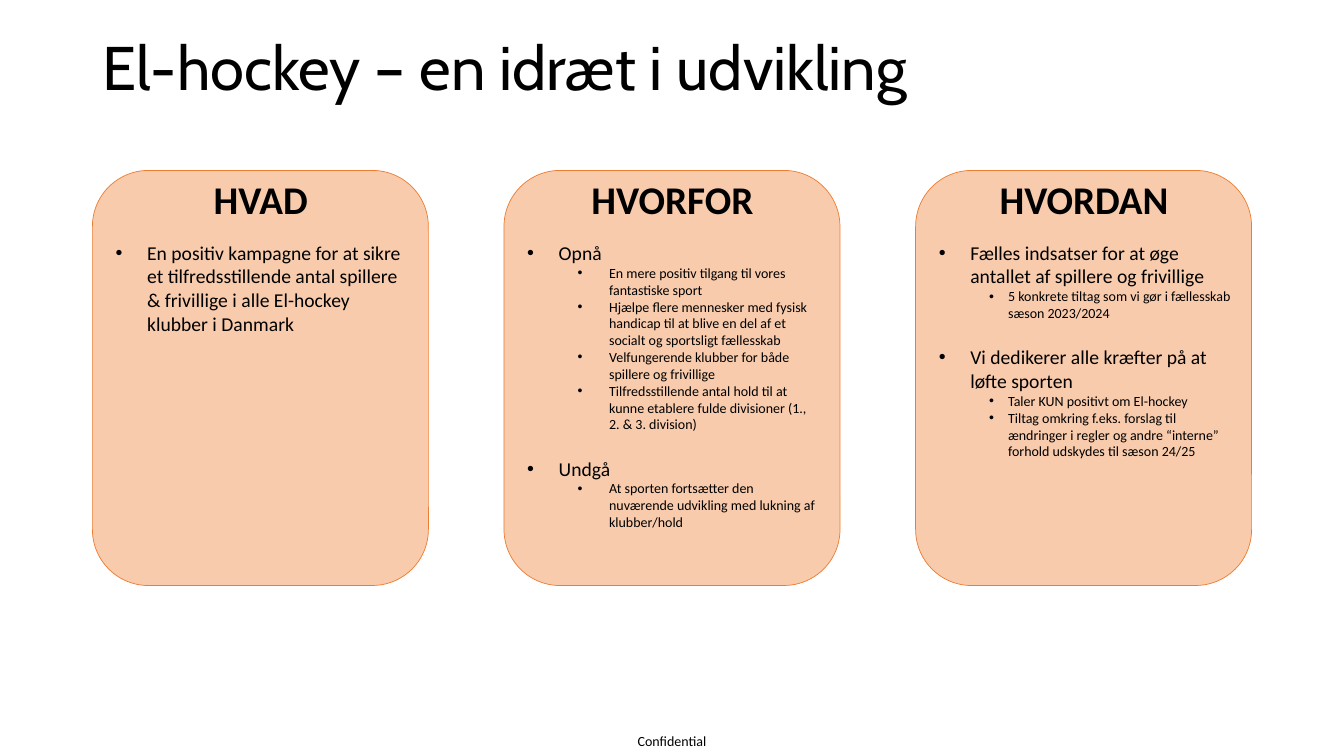
import pptx
import pptx.util
import pptx.dml.color
import pptx.enum.shapes
import pptx.enum.text
import pptx.oxml.ns
import lxml.etree

Pt = pptx.util.Pt
Align = pptx.enum.text.PP_ALIGN
Anchor = pptx.enum.text.MSO_ANCHOR
COLORS = {"text": "000000", "card": "F8CBAD", "edge": "ED7D31"}


def color(name):
    return pptx.dml.color.RGBColor.from_string(COLORS[name])


def add_text(left, top, width, height, lines, size, font="Calibri", bold=False):
    box = slide.shapes.add_textbox(Pt(left), Pt(top), Pt(width), Pt(height))
    frame = box.text_frame
    frame.word_wrap = True
    frame.text = "\n".join(lines)
    for para in frame.paragraphs:
        face = para.runs[0].font
        face.name, face.size, face.bold = font, Pt(size), bold
        face.color.rgb = color("text")
    return frame


deck = pptx.Presentation()
deck.slide_width, deck.slide_height = Pt(960), Pt(540)
slide = deck.slides.add_slide(deck.slide_layouts[6])

# Footer and title
foot = add_text(444.25, 519, 71.5, 21, ["Confidential"], 10)
foot.margin_left = foot.margin_right = foot.margin_top = foot.margin_bottom = 0
foot.vertical_anchor = Anchor.MIDDLE
foot.paragraphs[0].alignment = Align.CENTER

title = add_text(66, 28.8, 828, 42.5, ["El-hockey – en idræt i udvikling"], 44, "Cabin")
title.vertical_anchor = Anchor.MIDDLE
title.paragraphs[0].line_spacing = 0.9

# Columns: heading, body width, sub-bullet (margin, hang), (level, text) items
columns = [
    ("HVAD", 218, (58.5, 22.5), [
        (0, "En positiv kampagne for at sikre et tilfredsstillende antal spillere "
            "& frivillige i alle El-hockey klubber i Danmark"),
    ]),
    ("HVORFOR", 223, (58.5, 22.5), [
        (0, "Opnå"),
        (1, "En mere positiv tilgang til vores fantastiske sport"),
        (1, "Hjælpe flere mennesker med fysisk handicap til at blive en del af et "
            "socialt og sportsligt fællesskab"),
        (1, "Velfungerende klubber for både spillere og frivillige"),
        (1, "Tilfredsstillende antal hold til at kunne etablere fulde divisioner "
            "(1., 2. & 3. division)"),
        (0, "Undgå"),
        (1, "At sporten fortsætter den nuværende udvikling med lukning af klubber/hold"),
    ]),
    ("HVORDAN", 223, (49.5, 13.5), [
        (0, "Fælles indsatser for at øge antallet af spillere og frivillige"),
        (1, "5 konkrete tiltag som vi gør i fællesskab sæson 2023/2024"),
        (0, "Vi dedikerer alle kræfter på at løfte sporten"),
        (1, "Taler KUN positivt om El-hockey"),
        (1, "Tiltag omkring f.eks. forslag til ændringer i regler og andre “interne” "
            "forhold udskydes til sæson 24/25"),
    ]),
]

for col, (head, width, sub, items) in enumerate(columns):
    left = 66 + col * 294

    # Card
    card = slide.shapes.add_shape(
        pptx.enum.shapes.MSO_SHAPE.ROUNDED_RECTANGLE,
        Pt(left), Pt(121.75), Pt(240), Pt(296.5))
    card.shadow.inherit = False
    card.fill.solid()
    card.fill.fore_color.rgb = color("card")
    card.line.color.rgb = color("edge")
    card.line.width = Pt(0.5)

    # Heading
    frame = add_text(left + 28.8, 121.75, 183, 41, [head], 28, bold=True)
    frame.paragraphs[0].alignment = Align.CENTER

    # Bullets
    body = add_text(left + 9.5, 168.5, width, 240, [text for _, text in items], 14)
    for row, (level, _) in enumerate(items):
        para = body.paragraphs[row]
        para.level = level
        margin, hang = sub if level else (22.5, 22.5)
        if level:
            para.runs[0].font.size = Pt(10)
        elif row:
            para.space_before = Pt(17)
        props = para._p.get_or_add_pPr()
        props.set("marL", str(Pt(margin)))
        props.set("indent", str(-Pt(hang)))
        for tag, key, value in (("a:buFont", "typeface", "Arial"),
                                ("a:buChar", "char", "•")):
            mark = lxml.etree.SubElement(props, pptx.oxml.ns.qn(tag))
            mark.set(key, value)

deck.save("out.pptx")
